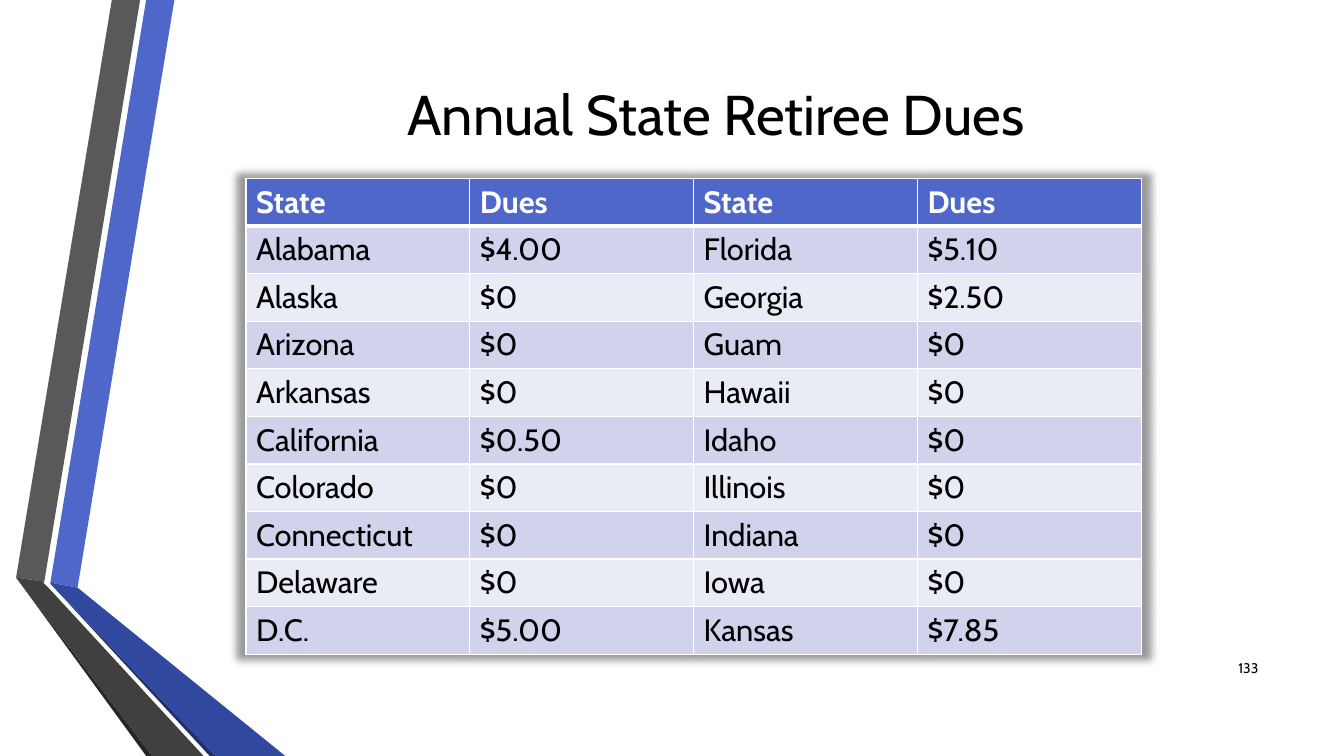
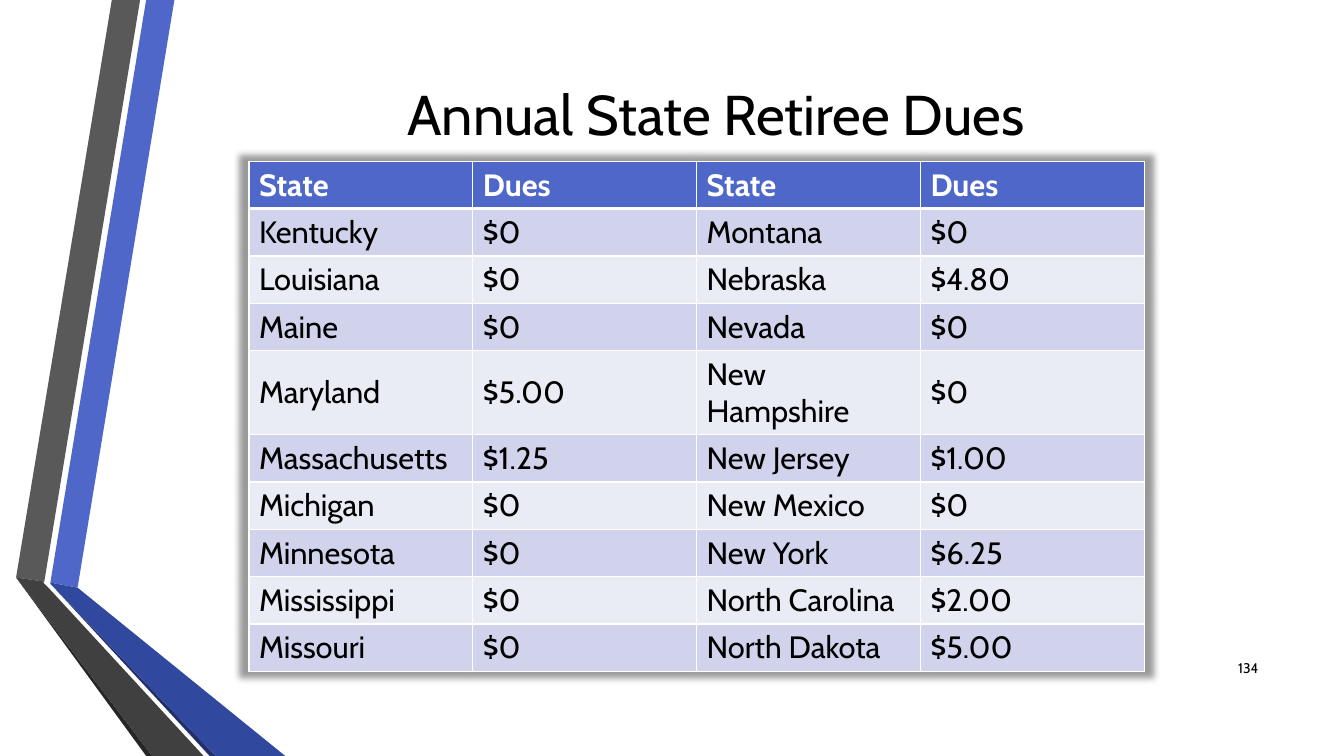
from lxml import etree
from pptx import Presentation
from pptx.dml.color import RGBColor
from pptx.enum.text import MSO_ANCHOR, PP_ALIGN
from pptx.oxml import parse_xml
from pptx.oxml.ns import qn
from pptx.util import Inches, Pt

MIDDLE = MSO_ANCHOR.MIDDLE
CENTER, RIGHT = PP_ALIGN.CENTER, PP_ALIGN.RIGHT

FONT = "Cabin"
BLACK = RGBColor(0x00, 0x00, 0x00)
WHITE = RGBColor(0xFF, 0xFF, 0xFF)
BLUE = RGBColor(0x4E, 0x67, 0xC8)
DEEP_BLUE = RGBColor(0x31, 0x48, 0x9F)
NAVY = RGBColor(0x21, 0x30, 0x6A)
GRAY = RGBColor(0x59, 0x59, 0x59)
DARK_GRAY = RGBColor(0x40, 0x40, 0x40)
CHARCOAL = RGBColor(0x26, 0x26, 0x26)
ROW_FILLS = (RGBColor(0xD0, 0xD3, 0xEB), RGBColor(0xE9, 0xEB, 0xF5))

TITLE = "Annual State Retiree Dues"
HEADER = ("State", "Dues", "State", "Dues")
COLUMN_WIDTH, ROW_HEIGHT = Inches(2.22), Inches(0.47)

PAGES = [
    {"number": 133, "table_at": (2.44, 1.77), "rows": [
        ("Alabama", "$4.00", "Florida", "$5.10"),
        ("Alaska", "$0", "Georgia", "$2.50"),
        ("Arizona", "$0", "Guam", "$0"),
        ("Arkansas", "$0", "Hawaii", "$0"),
        ("California", "$0.50", "Idaho", "$0"),
        ("Colorado", "$0", "Illinois", "$0"),
        ("Connecticut", "$0", "Indiana", "$0"),
        ("Delaware", "$0", "Iowa", "$0"),
        ("D.C.", "$5.00", "Kansas", "$7.85"),
    ]},
    {"number": 134, "table_at": (2.47, 1.6), "rows": [
        ("Kentucky", "$0", "Montana", "$0"),
        ("Louisiana", "$0", "Nebraska", "$4.80"),
        ("Maine", "$0", "Nevada", "$0"),
        ("Maryland", "$5.00", "New Hampshire", "$0"),
        ("Massachusetts", "$1.25", "New Jersey", "$1.00"),
        ("Michigan", "$0", "New Mexico", "$0"),
        ("Minnesota", "$0", "New York", "$6.25"),
        ("Mississippi", "$0", "North Carolina", "$2.00"),
        ("Missouri", "$0", "North Dakota", "$5.00"),
    ]},
]

RIBBONS = [
    (BLUE, [(0.5, 5.78), (0.77, 5.83), (1.73, 0), (1.45, 0)]),
    (GRAY, [(1.39, 0), (1.11, 0), (0.16, 5.73), (0.44, 5.77)]),
    (CHARCOAL, [(0.16, 5.73), (1.45, 7.5), (1.51, 7.5)]),
    (NAVY, [(0.5, 5.79), (2.08, 7.5), (2.14, 7.5)]),
    (DEEP_BLUE, [(0.5, 5.79), (2.14, 7.5), (2.83, 7.5), (0.77, 5.83), (0.5, 5.78)]),
    (DARK_GRAY, [(2.02, 7.5), (0.48, 5.83), (0.43, 5.78), (0.44, 5.77),
                 (0.16, 5.73), (1.51, 7.5)]),
]

TABLE_SHADOW = (
    '<a:effectLst xmlns:a="http://schemas.openxmlformats.org/drawingml/2006/main">'
    '<a:outerShdw blurRad="63500" sx="102000" sy="102000" algn="ctr" rotWithShape="0">'
    '<a:srgbClr val="000000"><a:alpha val="40000"/></a:srgbClr>'
    '</a:outerShdw></a:effectLst>')


def style_font(paragraph, size, color, bold=False):
    font = paragraph.runs[0].font
    font.name, font.size, font.bold = FONT, Pt(size), bold
    font.color.rgb = color


def add_label(slide, box, text, size, align):
    frame = slide.shapes.add_textbox(*map(Inches, box)).text_frame
    frame.word_wrap = True
    frame.vertical_anchor = MIDDLE
    frame.text = text
    frame.paragraphs[0].alignment = align
    style_font(frame.paragraphs[0], size, BLACK)


def add_ribbons(slide):
    group = slide.shapes.add_group_shape()
    for color, points in RIBBONS:
        corners = [(Inches(x), Inches(y)) for x, y in points]
        builder = group.shapes.build_freeform(*corners[0])
        builder.add_line_segments(corners[1:], close=True)
        ribbon = builder.convert_to_shape()
        ribbon.shadow.inherit = False
        ribbon.fill.solid()
        ribbon.fill.fore_color.rgb = color
        ribbon.line.fill.background()


def set_borders(cell, top, bottom):
    """Draw white cell borders; top and bottom widths are in points."""
    properties = cell._tc.get_or_add_tcPr()
    for side, width in (("L", 1), ("R", 1), ("T", top), ("B", bottom)):
        line = etree.SubElement(properties, qn(f"a:ln{side}"), w=str(Pt(width)))
        fill = etree.SubElement(line, qn("a:solidFill"))
        etree.SubElement(fill, qn("a:srgbClr"), val=str(WHITE))


def add_dues_table(slide, position, dues):
    rows = [HEADER, *dues]
    left, top = map(Inches, position)
    table = slide.shapes.add_table(
        len(rows), len(HEADER), left, top,
        COLUMN_WIDTH * len(HEADER), ROW_HEIGHT * len(rows)).table
    table._tbl.tblPr.insert(0, parse_xml(TABLE_SHADOW))
    for r, row in enumerate(rows):
        is_header = r == 0
        for c, text in enumerate(row):
            cell = table.cell(r, c)
            set_borders(cell, top=3 if r == 1 else 1, bottom=3 if is_header else 1)
            cell.fill.solid()
            cell.fill.fore_color.rgb = BLUE if is_header else ROW_FILLS[(r - 1) % 2]
            cell.vertical_anchor = MIDDLE
            cell.text_frame.text = text
            style_font(cell.text_frame.paragraphs[0], 22,
                       WHITE if is_header else BLACK, is_header)


def main():
    prs = Presentation()
    prs.slide_width, prs.slide_height = Inches(13.33), Inches(7.5)
    blank = prs.slide_layouts[6]
    for page in PAGES:
        slide = prs.slides.add_slide(blank)
        add_ribbons(slide)
        add_dues_table(slide, page["table_at"], page["rows"])
        add_label(slide, (1.62, 0.16, 10.96, 1.92), TITLE, 40, CENTER)
        add_label(slide, (11.98, 6.43, 0.6, 0.4), str(page["number"]), 10, RIGHT)
    prs.save("out.pptx")


if __name__ == "__main__":
    main()
